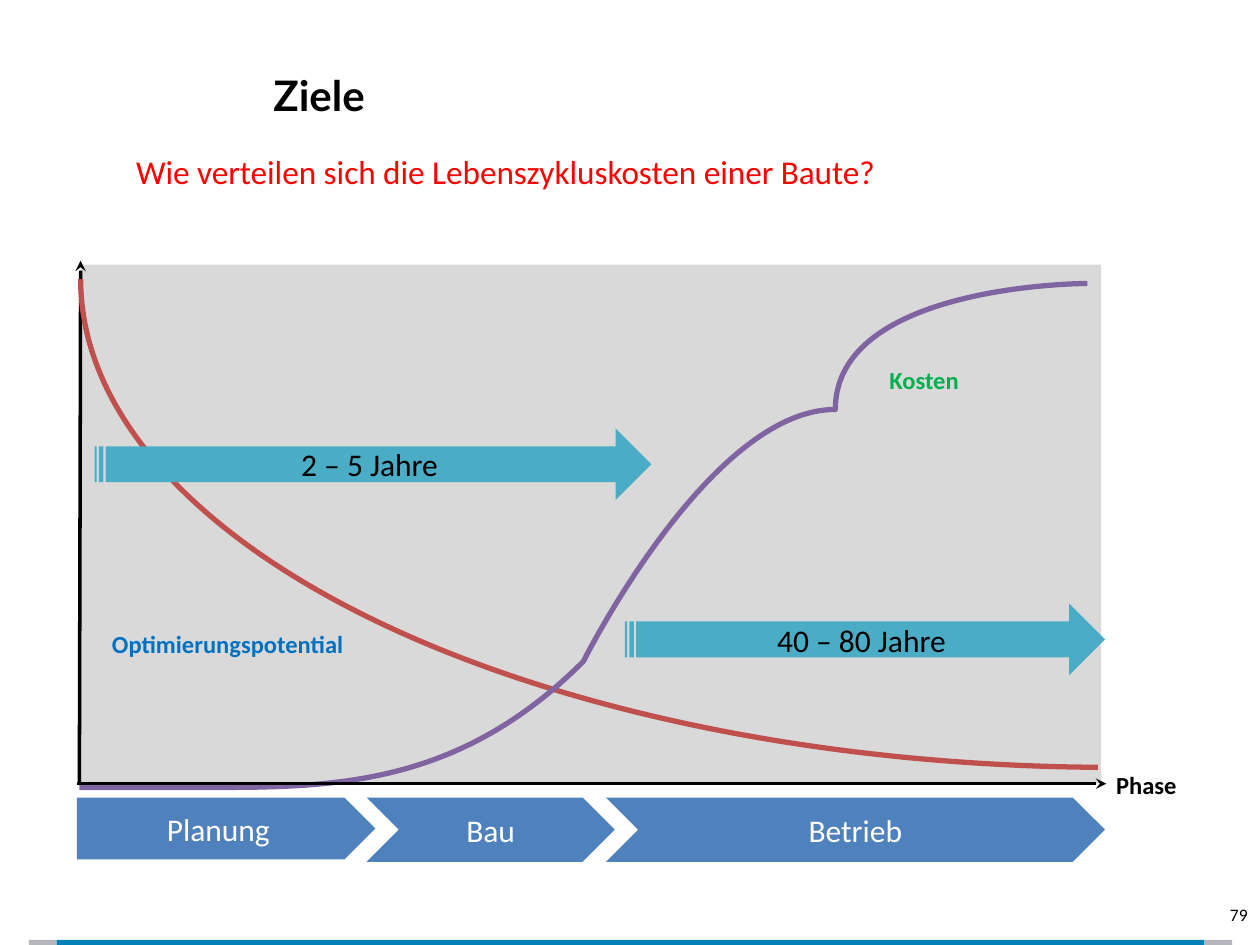
from lxml import etree
from pptx import Presentation
from pptx.dml.color import RGBColor
from pptx.enum import shapes, text
from pptx.oxml import ns
from pptx.util import Inches, Pt

BLACK = RGBColor(0x00, 0x00, 0x00)
WHITE = RGBColor(0xFF, 0xFF, 0xFF)
RED = RGBColor(0xFF, 0x00, 0x00)
GREEN = RGBColor(0x00, 0xB0, 0x50)
BLUE = RGBColor(0x00, 0x70, 0xC0)
PHASE_BLUE = RGBColor(0x4F, 0x81, 0xBD)
SPAN_TEAL = RGBColor(0x4B, 0xAC, 0xC6)
PLOT_GREY = RGBColor(0xD9, 0xD9, 0xD9)
POTENTIAL_RED = RGBColor(0xC0, 0x50, 0x4D)
COST_PURPLE = RGBColor(0x80, 0x64, 0xA2)
BAR_GREY = RGBColor(0xB4, 0xB6, 0xB9)
BAR_BLUE = RGBColor(0x00, 0x80, 0xB7)

SHAPE = shapes.MSO_SHAPE
ALIGN = text.PP_ALIGN
ANCHOR = text.MSO_ANCHOR


def inches(*lengths):
    return [Inches(length) for length in lengths]


def write(frame, words, size, color, bold=False, align=ALIGN.LEFT, font="Calibri"):
    frame.text = words
    paragraph = frame.paragraphs[0]
    paragraph.alignment = align
    face = paragraph.runs[0].font
    face.name, face.size, face.bold = font, Pt(size), bold
    face.color.rgb = color
    return paragraph


def add_block(slide, kind, box, fill, words="", color=WHITE):
    block = slide.shapes.add_shape(kind, *inches(*box))
    block.shadow.inherit = False
    block.fill.solid()
    block.fill.fore_color.rgb = fill
    block.line.fill.background()
    if words:
        write(block.text_frame, words, 18, color, align=ALIGN.CENTER)
        block.text_frame.vertical_anchor = ANCHOR.MIDDLE


def add_label(slide, box, words, color, wrap=True):
    frame = slide.shapes.add_textbox(*inches(*box)).text_frame
    frame.word_wrap = wrap
    frame.auto_size = text.MSO_AUTO_SIZE.SHAPE_TO_FIT_TEXT
    write(frame, words, 14, color, bold=True)


def add_axis(slide, start, end):
    axis = slide.shapes.add_connector(
        shapes.MSO_CONNECTOR.STRAIGHT, *inches(*start, *end))
    axis.line.color.rgb = BLACK
    axis.line.width = Pt(2)
    etree.SubElement(axis.line._get_or_add_ln(), ns.qn("a:tailEnd"), type="stealth")
    etree.SubElement(axis._element.spPr, ns.qn("a:effectLst"))


def style_curve(curve, color):
    curve.shadow.inherit = False
    curve.fill.background()
    curve.line.color.rgb = color
    curve.line.width = Pt(3)


def add_footer(slide, left, top, width, height):
    # Grey ends around a blue bar
    end = 0.22
    add_block(slide, SHAPE.RECTANGLE, (left, top, end, height), BAR_GREY)
    add_block(slide, SHAPE.RECTANGLE, (left + width - end, top, end, height), BAR_GREY)
    add_block(slide, SHAPE.RECTANGLE,
              (left + end, top, width - 2 * end, height), BAR_BLUE)


def add_page_number(slide, left, top, width, height):
    frame = slide.shapes.add_textbox(*inches(left, top, width, height)).text_frame
    frame.word_wrap = True
    frame.vertical_anchor = ANCHOR.MIDDLE
    write(frame, "79", 10, BLACK, align=ALIGN.RIGHT)


def place(placeholder, box):
    placeholder.left, placeholder.top, placeholder.width, placeholder.height = inches(*box)
    frame = placeholder.text_frame
    frame.auto_size = text.MSO_AUTO_SIZE.NONE
    frame.vertical_anchor = ANCHOR.TOP
    return frame


def fill_title(slide, *box):
    title = write(place(slide.shapes.title, box), "Ziele", 24, BLACK,
                  bold=True, font="Lato")
    title.line_spacing = Pt(50)


def fill_question(slide, *box):
    question = write(place(slide.placeholders[1], box),
                     "Wie verteilen sich die Lebenszykluskosten einer Baute?", 19, RED)
    question.space_before = Pt(0)
    properties = question._p.get_or_add_pPr()
    properties.set("marL", str(Inches(0.38)))
    properties.set("indent", str(-Inches(0.38)))
    etree.SubElement(properties, ns.qn("a:buNone"))


def add_phases(slide, left, top, height):
    phases = [("Planung", SHAPE.PENTAGON, 0, 2.37, height - 0.02),
              ("Bau", SHAPE.CHEVRON, 2.3, 1.97, height),
              ("Betrieb", SHAPE.CHEVRON, 4.2, 3.96, height)]
    for name, kind, offset, width, tall in phases:
        add_block(slide, kind, (left + offset, top, width, tall), PHASE_BLUE, name)


def add_potential_curve(slide, left, top, width, height):
    # Quarter of an ellipse, turned to fall from the upper left
    curve = slide.shapes.add_shape(SHAPE.ARC, *inches(left, top, width, height))
    curve.adjustments[0] = 163.087
    curve.adjustments[1] = 0
    curve.rotation = 180
    style_curve(curve, POTENTIAL_RED)


def add_cost_curve(slide, left, top):
    # A straight start, then three Bézier segments of three points each
    start, bend = (0, 3.94), (1.37, 3.87)
    beziers = [(1.97, 3.75), (2.9, 3.72), (3.62, 3.23),
               (4.35, 2.74), (4.96, 1.45), (5.7, 0.91),
               (6.43, 0.38), (7.67, 0.21), (8.04, 0)]
    builder = slide.shapes.build_freeform(*start, scale=Inches(1))
    builder.add_line_segments([bend] + beziers, close=False)
    curve = builder.convert_to_shape(*inches(left, top))
    path = curve._element.find(".//" + ns.qn("a:path"))
    steps = path.findall(ns.qn("a:lnTo"))[1:]
    for first in range(0, len(steps), 3):
        bezier = etree.SubElement(path, ns.qn("a:cubicBezTo"))
        for step in steps[first:first + 3]:
            bezier.append(step[0])
            path.remove(step)
    style_curve(curve, COST_PURPLE)


def add_cost_diagram(slide, left, top, width, height):
    right, bottom = left + width, top + height
    add_block(slide, SHAPE.RECTANGLE, (left, top, width, height), PLOT_GREY)
    add_axis(slide, (left - 0.01, bottom), (left, top - 0.03))
    add_label(slide, (right + 0.02, bottom - 0.16, 1.04, 0.34), "Phase", BLACK)
    add_label(slide, (left + 6.32, top + 0.75, 1.04, 0.34), "Kosten", GREEN)

    # Curves
    add_potential_curve(slide, left, top - 3.76, 16.39, 7.75)
    add_cost_curve(slide, left - 0.01, top + 0.15)
    add_label(slide, (left + 0.15, top + 2.84, 2.29, 0.34),
              "Optimierungspotential", BLUE, wrap=False)
    add_axis(slide, (left - 0.03, bottom), (right + 0.04, bottom))

    # Time spans
    for words, x, y, span in [("2 – 5 Jahre", 0.11, 1.3, 4.42),
                              ("40 – 80 Jahre", 4.32, 2.69, 3.81)]:
        add_block(slide, SHAPE.STRIPED_RIGHT_ARROW,
                  (left + x, top + y, span, 0.57), SPAN_TEAL, words, BLACK)


def main():
    deck = Presentation()
    deck.slide_width, deck.slide_height = inches(10, 7.5)
    slide = deck.slides.add_slide(deck.slide_layouts[1])
    add_footer(slide, 0.23, 7.46, 9.55, 0.06)
    fill_title(slide, 2.07, 0.21, 5.84, 0.47)
    fill_question(slide, 0.98, 1.15, 8.03, 5.67)
    add_phases(slide, 0.61, 6.33, 0.51)
    add_cost_diagram(slide, 0.64, 2.1, 8.1, 4.12)
    add_page_number(slide, 7.67, 7.06, 2.33, 0.4)
    deck.save("out.pptx")


if __name__ == "__main__":
    main()
